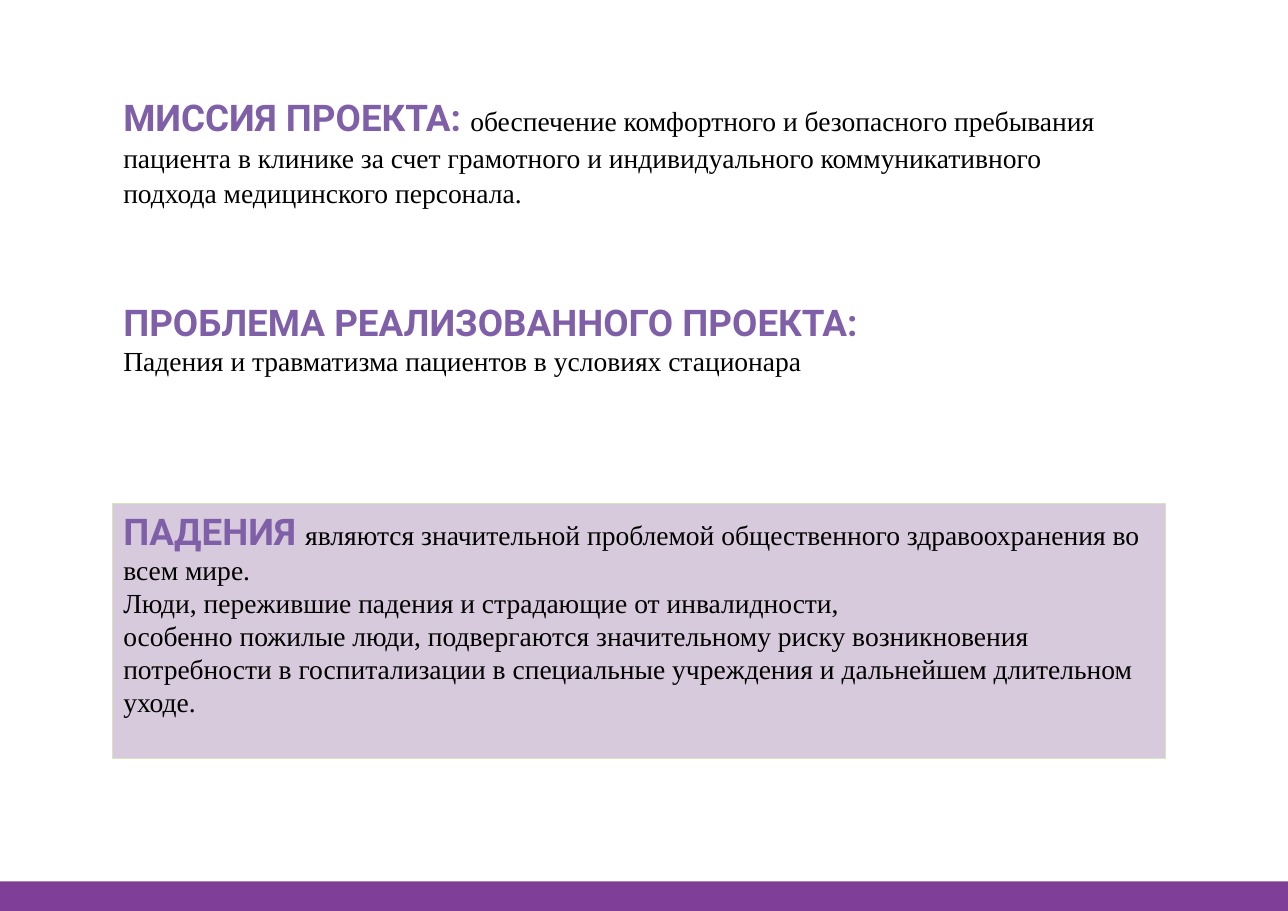
from pptx import Presentation
from pptx.dml.color import RGBColor
from pptx.enum.shapes import MSO_SHAPE as SHAPE
from pptx.enum.text import MSO_ANCHOR as ANCHOR, PP_ALIGN as ALIGN
from pptx.util import Inches, Pt

BLACK = RGBColor(0x00, 0x00, 0x00)
VIOLET = RGBColor(0x7F, 0x5F, 0xA8)
PURPLE = RGBColor(0x7F, 0x3F, 0x98)
LILAC = RGBColor(0xD7, 0xCA, 0xDC)
PALE_GREEN = RGBColor(0xD7, 0xE4, 0xBD)

WIDTH, HEIGHT = Inches(11.69), Inches(8.27)
LEFT = 8.73

MISSION = [[
    ("МИССИЯ ПРОЕКТА: ", True),
    ("обеспечение комфортного и безопасного пребывания пациента в клинике "
     "за счет грамотного и индивидуального коммуникативного подхода "
     "медицинского персонала.", False),
]]
PROBLEM = [
    [("ПРОБЛЕМА РЕАЛИЗОВАННОГО ПРОЕКТА:", True)],
    [("Падения и травматизма пациентов в условиях стационара", False)],
]
FALLS = [
    [("ПАДЕНИЯ ", True),
     ("являются значительной проблемой общественного здравоохранения "
      "во всем мире.", False)],
    [("Люди, пережившие падения и страдающие от инвалидности,", False)],
    [("особенно пожилые люди, подвергаются значительному риску возникновения "
      "потребности в госпитализации в специальные учреждения и дальнейшем "
      "длительном уходе.", False)],
]


def place(x, y, w, h):
    """Turn percentages of the slide into a box in EMU."""
    return [int(side * share / 100) for side, share in
            ((WIDTH, x), (HEIGHT, y), (WIDTH, w), (HEIGHT, h))]


def write(tf, paragraphs):
    """Fill a frame with paragraphs of (wording, is_heading) runs."""
    tf.word_wrap = True
    tf.vertical_anchor = ANCHOR.TOP
    for i, parts in enumerate(paragraphs):
        p = tf.add_paragraph() if i else tf.paragraphs[0]
        p.alignment = ALIGN.LEFT
        for wording, is_heading in parts:
            r = p.add_run()
            r.text = wording
            r.font.name = "Roboto" if is_heading else "Times New Roman"
            r.font.size = Pt(24 if is_heading else 18)
            r.font.bold = is_heading
            r.font.color.rgb = VIOLET if is_heading else BLACK


def add_statement(s, box, paragraphs, line_spacing=None):
    tf = s.shapes.add_textbox(*box).text_frame
    write(tf, paragraphs)
    for p in tf.paragraphs:
        p.line_spacing = line_spacing


def add_bar(s, box, fill):
    sp = s.shapes.add_shape(SHAPE.RECTANGLE, *box)
    sp.shadow.inherit = False
    sp.fill.solid()
    sp.fill.fore_color.rgb = fill
    sp.line.fill.background()
    return sp


def add_panel(s, box, paragraphs):
    sp = add_bar(s, box, LILAC)
    sp.line.color.rgb = PALE_GREEN
    sp.line.width = Pt(0.75)
    write(sp.text_frame, paragraphs)


def main():
    prs = Presentation()
    prs.slide_width, prs.slide_height = WIDTH, HEIGHT
    s = prs.slides.add_slide(prs.slide_layouts[6])
    add_bar(s, place(0, 96.74, 100, 3.26), PURPLE)
    add_panel(s, place(LEFT, 55.26, 81.78, 28.05), FALLS)
    add_statement(s, place(LEFT, 9.43, 80.15, 14.15), MISSION, 1.07)
    add_statement(s, place(LEFT, 32.29, 61.42, 13.42), PROBLEM)
    prs.save("out.pptx")


if __name__ == "__main__":
    main()
